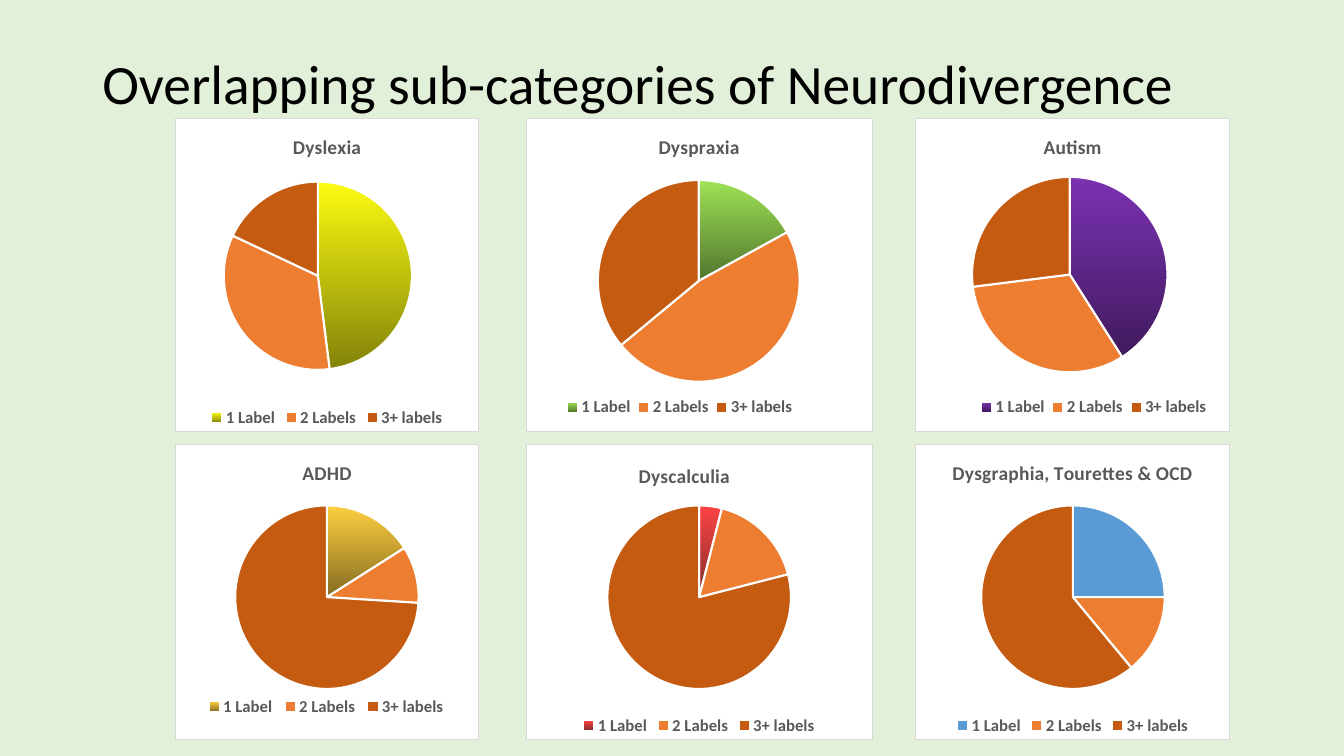
from dataclasses import dataclass

from pptx import Presentation
from pptx.chart.data import CategoryChartData
from pptx.dml.color import RGBColor
from pptx.enum.chart import XL_CHART_TYPE as ChartType, XL_LEGEND_POSITION as LegendPosition
from pptx.enum.text import MSO_ANCHOR as Anchor
from pptx.oxml import parse_xml
from pptx.oxml.ns import nsdecls, qn
from pptx.util import Cm, Pt

FONT = "Calibri"
COLORS = {
    "background": "E2F0D9", "black": "000000", "white": "FFFFFF",
    "text": "595959", "border": "D9D9D9",
    "two labels": "ED7D31", "three labels": "C55A11",
}
CATEGORIES = ("1 Label", "2 Labels", "3+ labels")

# Grid of chart cards, in cm: (start, length)
COLUMNS = ((4.42, 7.65), (13.25, 8.74), (23.06, 7.95))
ROWS = ((2.97, 7.92), (11.18, 7.47))


@dataclass
class Condition:
    """One pie; centre, radius, legend and heading are cm inside its card."""
    title: str
    values: tuple
    one_label: tuple  # one colour, or top and bottom of a gradient
    centre: tuple
    radius: float
    series: str = ""
    legend: tuple = ()  # left, top, width, height
    heading: tuple = ()  # left, top


CONDITIONS = (
    Condition("Dyslexia", (48, 34, 18), ("FBFB11", "838309"), (3.59, 3.98), 2.38),
    Condition("Dyspraxia", (17, 47, 36), ("9EE256", "52762D"), (4.36, 4.11), 2.55,
              legend=(0.83, 7.0, 6.1, 0.6)),
    Condition("Autism", (41, 32, 27), ("7B32B2", "401A5D"), (3.9, 3.95), 2.47,
              legend=(1.46, 7.0, 6.1, 0.6)),
    Condition("ADHD", (16, 10, 74), ("FECF40", "846C21"), (3.82, 3.87), 2.32,
              legend=(0.65, 6.34, 6.3, 0.6)),
    Condition("Dyscalculia", (4, 17, 79), ("FE4444", "832B2B"), (4.37, 3.87), 2.32,
              series="Series 1", heading=(2.75, 0.38)),
    Condition("Dysgraphia, Tourettes & OCD", (25, 14, 61), ("5B9BD5",), (3.98, 3.87), 2.32,
              series="Series 1"),
)


def rgb(value):
    return RGBColor.from_string(value)


def style_font(font, size, color, bold=False):
    font.name, font.size, font.bold = FONT, Pt(size), bold
    font.color.rgb = rgb(color)


def place_part(part, card, position, inner=False):
    """Fix a chart part at a position given in cm inside its card."""
    for old in part.findall(qn("c:layout")):
        part.remove(old)
    _, _, width, height = card
    fractions = [cm / side for cm, side in zip(position, (width, height) * 2)]
    target = '<c:layoutTarget val="inner"/>' if inner else ""
    modes = '<c:xMode val="edge"/><c:yMode val="edge"/>'
    sides = "".join(f'<c:{side} val="{value:.4f}"/>' for side, value in zip("xywh", fractions))
    layout = parse_xml(f'<c:layout {nsdecls("c")}><c:manualLayout>{target}{modes}{sides}'
                       "</c:manualLayout></c:layout>")
    part.insert(0 if inner else 1, layout)


def style_card(chart_space):
    """White, square-cornered card with a thin grey border."""
    body = chart_space.find(qn("c:chart"))
    body.addprevious(parse_xml(f'<c:roundedCorners {nsdecls("c")} val="0"/>'))
    body.addnext(parse_xml(
        f'<c:spPr {nsdecls("c", "a")}>'
        f'<a:solidFill><a:srgbClr val="{COLORS["white"]}"/></a:solidFill>'
        f'<a:ln w="{Pt(0.75)}"><a:solidFill><a:srgbClr val="{COLORS["border"]}"/></a:solidFill>'
        "</a:ln></c:spPr>"))


def color_slices(series, one_label):
    slices = (one_label, (COLORS["two labels"],), (COLORS["three labels"],))
    for index, colors in enumerate(slices):
        look = series.points[index].format
        if len(colors) == 1:
            look.fill.solid()
            look.fill.fore_color.rgb = rgb(colors[0])
        else:
            look.fill.gradient()
            look.fill.gradient_angle = 270
            for stop, color in zip(look.fill.gradient_stops, colors):
                stop.color.rgb = rgb(color)
        look.line.color.rgb = rgb(COLORS["white"])
        look.line.width = Pt(1.5)


def add_condition(slide, card, condition):
    data = CategoryChartData()
    data.categories = CATEGORIES
    data.add_series(condition.series or condition.title, condition.values)
    chart = slide.shapes.add_chart(ChartType.PIE, *map(Cm, card), data).chart
    style_font(chart.font, 10, COLORS["black"])
    style_card(chart.element)

    # Heading
    chart.has_title = True
    heading = chart.chart_title.text_frame.paragraphs[0].add_run()
    heading.text = condition.title
    style_font(heading.font, 14, COLORS["text"], True)
    chart.chart_title.include_in_layout = False
    if condition.heading:
        place_part(chart.element.xpath("c:chart/c:title")[0], card, condition.heading)

    # Pie
    pie = chart.plots[0]
    pie.vary_by_categories = True
    color_slices(pie.series[0], condition.one_label)
    x, y = condition.centre
    radius = condition.radius
    place_part(chart.element.xpath("c:chart/c:plotArea")[0], card,
               (x - radius, y - radius, 2 * radius, 2 * radius), inner=True)

    # Legend
    chart.has_legend = True
    chart.legend.position = LegendPosition.BOTTOM
    chart.legend.include_in_layout = False
    style_font(chart.legend.font, 12, COLORS["text"], True)
    if condition.legend:
        place_part(chart.element.xpath("c:chart/c:legend")[0], card, condition.legend)


def add_title(slide, box, text):
    frame = slide.shapes.add_textbox(*map(Cm, box)).text_frame
    frame.word_wrap = True
    frame.vertical_anchor = Anchor.MIDDLE
    paragraph = frame.paragraphs[0]
    paragraph.line_spacing = 0.9
    title = paragraph.add_run()
    title.text = text
    style_font(title.font, 39.6, COLORS["black"])


def main():
    deck = Presentation()
    deck.slide_width, deck.slide_height = Cm(33.87), Cm(19.05)
    slide = deck.slides.add_slide(deck.slide_layouts[6])
    slide.background.fill.solid()
    slide.background.fill.fore_color.rgb = rgb(COLORS["background"])

    add_title(slide, (2.33, 0.33, 29.21, 3.68), "Overlapping sub-categories of Neurodivergence")
    for index, condition in enumerate(CONDITIONS):
        row, column = divmod(index, len(COLUMNS))
        (left, width), (top, height) = COLUMNS[column], ROWS[row]
        add_condition(slide, (left, top, width, height), condition)

    deck.save("out.pptx")


if __name__ == "__main__":
    main()
